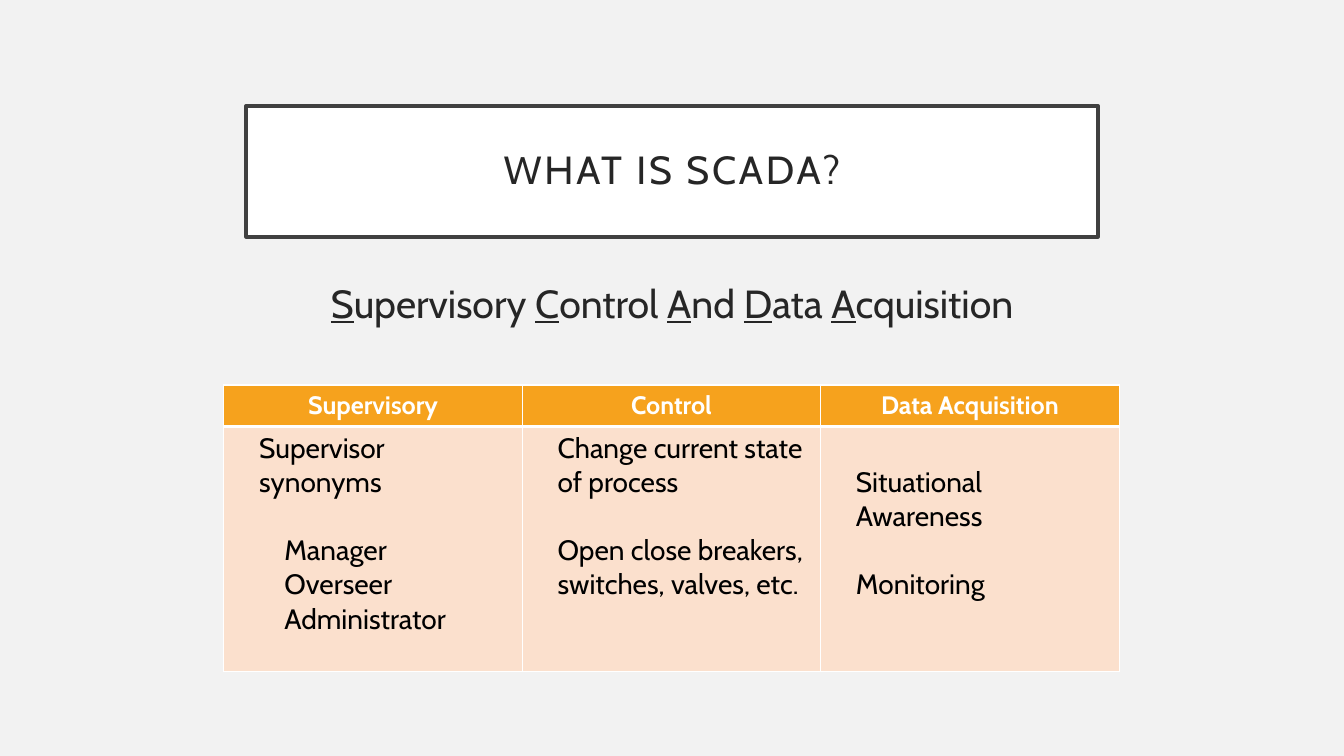
from lxml import etree
from pptx import Presentation
from pptx.dml.color import RGBColor
from pptx.enum.shapes import MSO_SHAPE
from pptx.enum.text import MSO_ANCHOR, PP_ALIGN
from pptx.oxml.ns import qn
from pptx.util import Inches, Pt

CENTER, LEFT = PP_ALIGN.CENTER, PP_ALIGN.LEFT
MIDDLE = MSO_ANCHOR.MIDDLE
RECTANGLE = MSO_SHAPE.RECTANGLE
FONT = "Cabin"
COLORS = {
    "background": "F2F2F2", "white": "FFFFFF", "frame": "404040",
    "text": "262626", "black": "000000", "header": "F6A21D", "body": "FBE0CD",
}


def write(para, text, size=20, color="black", bold=False, underline=False,
          align=LEFT, indent=0, before=0, tracking=0):
    """Add one formatted span to a paragraph."""
    para.alignment = align
    para.space_before = Pt(before)
    para._p.get_or_add_pPr().set("marL", str(Inches(indent)))
    span = para.add_run()
    span.text = text
    span.font.name, span.font.size = FONT, Pt(size)
    span.font.bold, span.font.underline = bold, underline
    span.font.color.rgb = RGBColor.from_string(COLORS[color])
    if tracking:
        span._r.get_or_add_rPr().set("spc", str(tracking * 100))


def style_cell(cell, fill, bottom_width):
    """Fill a cell and give it white borders."""
    properties = cell._tc.get_or_add_tcPr()
    for side, width in (("L", 1), ("R", 1), ("T", 1), ("B", bottom_width)):
        border = etree.SubElement(properties, qn(f"a:ln{side}"), w=str(Pt(width)))
        solid = etree.SubElement(border, qn("a:solidFill"))
        etree.SubElement(solid, qn("a:srgbClr"), val=COLORS["white"])
    cell.fill.solid()
    cell.fill.fore_color.rgb = RGBColor.from_string(COLORS[fill])


deck = Presentation()
deck.slide_width, deck.slide_height = Inches(13.33), Inches(7.5)
page = deck.slides.add_slide(deck.slide_layouts[6])
page.background.fill.solid()
page.background.fill.fore_color.rgb = RGBColor.from_string(COLORS["background"])

# Framed title
title = page.shapes.add_shape(RECTANGLE, Inches(2.44), Inches(1.05), Inches(8.45), Inches(1.3))
title.shadow.inherit = False
title.fill.solid()
title.fill.fore_color.rgb = RGBColor.from_string(COLORS["white"])
title.line.color.rgb = RGBColor.from_string(COLORS["frame"])
title.line.width = Pt(2.5)
frame = title.text_frame
frame.word_wrap = True
frame.vertical_anchor = MIDDLE
frame.margin_left = frame.margin_right = frame.margin_top = frame.margin_bottom = Inches(0.2)
frame.paragraphs[0].line_spacing = 0.9
write(frame.paragraphs[0], "WHAT IS SCADA?", size=28, color="text", align=CENTER, tracking=2)

# Acronym spelled out, with underlined initials
box = page.shapes.add_textbox(Inches(2.44), Inches(2.72), Inches(8.45), Inches(4.5))
box.text_frame.word_wrap = True
phrase = box.text_frame.paragraphs[0]
for word in ("Supervisory ", "Control ", "And ", "Data ", "Acquisition"):
    write(phrase, word[0], size=28, color="text", underline=True, align=CENTER)
    write(phrase, word[1:], size=28, color="text", align=CENTER)

# Table: heading, top margin, then (text, indent, space before) per paragraph
BLANK_LINE = 24.3
columns = [
    ("Supervisory", 0.05, [("Supervisor synonyms", 0.25, 0),
                           ("Manager", 0.5, BLANK_LINE),
                           ("Overseer", 0.5, 0),
                           ("Administrator", 0.5, 0)]),
    ("Control", 0.05, [("Change current state of process", 0.25, 0),
                       ("Open close breakers, switches, valves, etc.", 0.25, BLANK_LINE)]),
    ("Data Acquisition", 0.39, [("Situational Awareness", 0.25, 0),
                                ("Monitoring", 0.25, BLANK_LINE)]),
]
table = page.shapes.add_table(2, len(columns), Inches(2.22), Inches(3.82),
                              Inches(8.88), Inches(2.84)).table
table.rows[0].height, table.rows[1].height = Inches(0.41), Inches(2.43)
for index, (heading, top_margin, lines) in enumerate(columns):
    table.columns[index].width = Inches(2.96)
    header, body = table.cell(0, index), table.cell(1, index)
    style_cell(header, "header", bottom_width=3)
    write(header.text_frame.paragraphs[0], heading, size=18, color="white",
          bold=True, align=CENTER)
    style_cell(body, "body", bottom_width=1)
    body.margin_top = Inches(top_margin)
    for number, (text, indent, before) in enumerate(lines):
        para = body.text_frame.add_paragraph() if number else body.text_frame.paragraphs[0]
        write(para, text, indent=indent, before=before)

deck.save("out.pptx")
